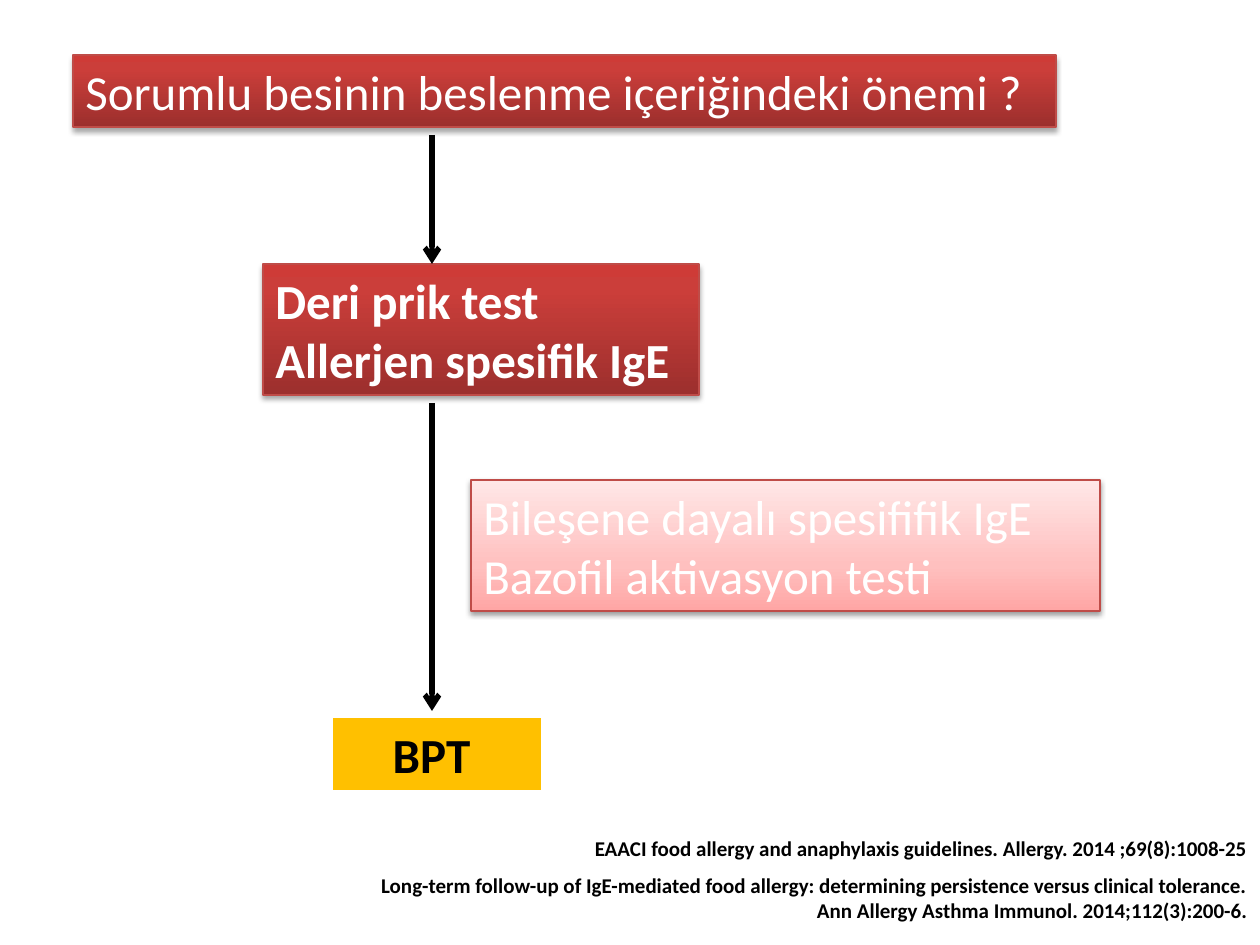
from lxml import etree
from pptx import Presentation
from pptx import util as u
from pptx.dml.color import RGBColor
from pptx.enum import shapes, text
from pptx.oxml.ns import qn

PX = 914400 / 126
FONT = "Calibri"
DARK_RED = [(0, "9C2F2D"), (80, "CB3E3A"), (100, "CE3B37")]
PALE_RED = [(0, "FFA6A5"), (35, "FFC0BF"), (100, "FFE7E7")]


def px(*lengths):
    return [u.Emu(round(length * PX)) for length in lengths]


def paint(color_format, color):
    color_format.rgb = RGBColor.from_string(color)


def add_xml(parent, tag, **attributes):
    return etree.SubElement(parent, qn(tag), attributes)


def write_lines(shape, lines, size, color, bold, align):
    frame = shape.text_frame
    frame.word_wrap = True
    frame.vertical_anchor = text.MSO_ANCHOR.TOP
    for number, line in enumerate(lines):
        paragraph = frame.add_paragraph() if number else frame.paragraphs[0]
        paragraph.alignment = align
        run = paragraph.add_run()
        run.text = line
        run.font.name, run.font.size, run.font.bold = FONT, u.Pt(size), bold
        paint(run.font.color, color)


def fill_gradient(shape, stops):
    """Fill from bottom to top with (percent, colour) stops."""
    shape.fill.gradient()
    shape.fill.gradient_angle = 90
    stop_list = shape._element.spPr.find(qn("a:gradFill")).find(qn("a:gsLst"))
    for stop in list(stop_list):
        stop_list.remove(stop)
    for percent, color in stops:
        stop = add_xml(stop_list, "a:gs", pos=str(percent * 1000))
        add_xml(stop, "a:srgbClr", val=color)


def drop_shadow(shape, distance, opacity):
    effects = shape._element.spPr.find(qn("a:effectLst"))
    shadow = add_xml(effects, "a:outerShdw", blurRad=str(u.Pt(3.1)),
                     dist=str(u.Pt(distance)), dir="5400000", rotWithShape="0")
    color = add_xml(shadow, "a:srgbClr", val="000000")
    add_xml(color, "a:alpha", val=str(opacity * 1000))


def add_box(slide, box):
    shape = slide.shapes.add_shape(shapes.MSO_SHAPE.RECTANGLE, *px(*box))
    shape.shadow.inherit = False
    return shape


def add_step(slide, box, lines, stops, bold=False, distance=1.8, opacity=35):
    step = add_box(slide, box)
    fill_gradient(step, stops)
    paint(step.line.color, "BF4C48")
    step.line.width = u.Pt(0.75)
    drop_shadow(step, distance, opacity)
    write_lines(step, lines, 28, "FFFFFF", bold, text.PP_ALIGN.LEFT)


def add_outcome(slide, box, label):
    outcome = add_box(slide, box)
    outcome.fill.solid()
    paint(outcome.fill.fore_color, "FFC000")
    outcome.line.fill.background()
    write_lines(outcome, [label], 28, "000000", True, text.PP_ALIGN.CENTER)


def add_down_arrow(slide, x, top, bottom):
    arrow = slide.shapes.add_connector(
        shapes.MSO_CONNECTOR.STRAIGHT, *px(x, top, x, bottom))
    paint(arrow.line.color, "000000")
    arrow.line.width = u.Pt(3)
    add_xml(arrow.line._get_or_add_ln(), "a:tailEnd", type="arrow")
    add_xml(arrow._element.spPr, "a:effectLst")


def add_citation(slide, box, lines):
    citation = slide.shapes.add_textbox(*px(*box))
    write_lines(citation, lines, 12, "000000", True, text.PP_ALIGN.RIGHT)


def build_flow(slide):
    add_step(slide, (263, 264, 436, 131),
             ["Deri prik test", "Allerjen spesifik IgE"], DARK_RED, bold=True)
    add_step(slide, (471, 480, 629, 131),
             ["Bileşene dayalı spesififik IgE", "Bazofil aktivasyon testi"],
             PALE_RED, distance=1.6, opacity=38)
    add_step(slide, (73, 55, 983, 72),
             ["Sorumlu besinin beslenme içeriğindeki önemi ?"], DARK_RED)
    add_outcome(slide, (333, 718, 208, 72), "BPT ")
    for top, bottom in [(135, 264), (403, 711)]:
        add_down_arrow(slide, 432, top, bottom)


def build_citations(slide):
    add_citation(slide, (0, 866, 1260, 63), [
        "Long-term follow-up of IgE-mediated food allergy: "
        "determining persistence versus clinical tolerance.",
        "Ann Allergy Asthma Immunol. 2014;112(3):200-6."])
    add_citation(slide, (84, 829, 1176, 38), [
        "EAACI food allergy and anaphylaxis guidelines. "
        "Allergy. 2014 ;69(8):1008-25"])


def main():
    deck = Presentation()
    deck.slide_width, deck.slide_height = px(1260, 945)
    slide = deck.slides.add_slide(deck.slide_layouts[6])
    build_flow(slide)
    build_citations(slide)
    deck.save("out.pptx")


if __name__ == "__main__":
    main()
